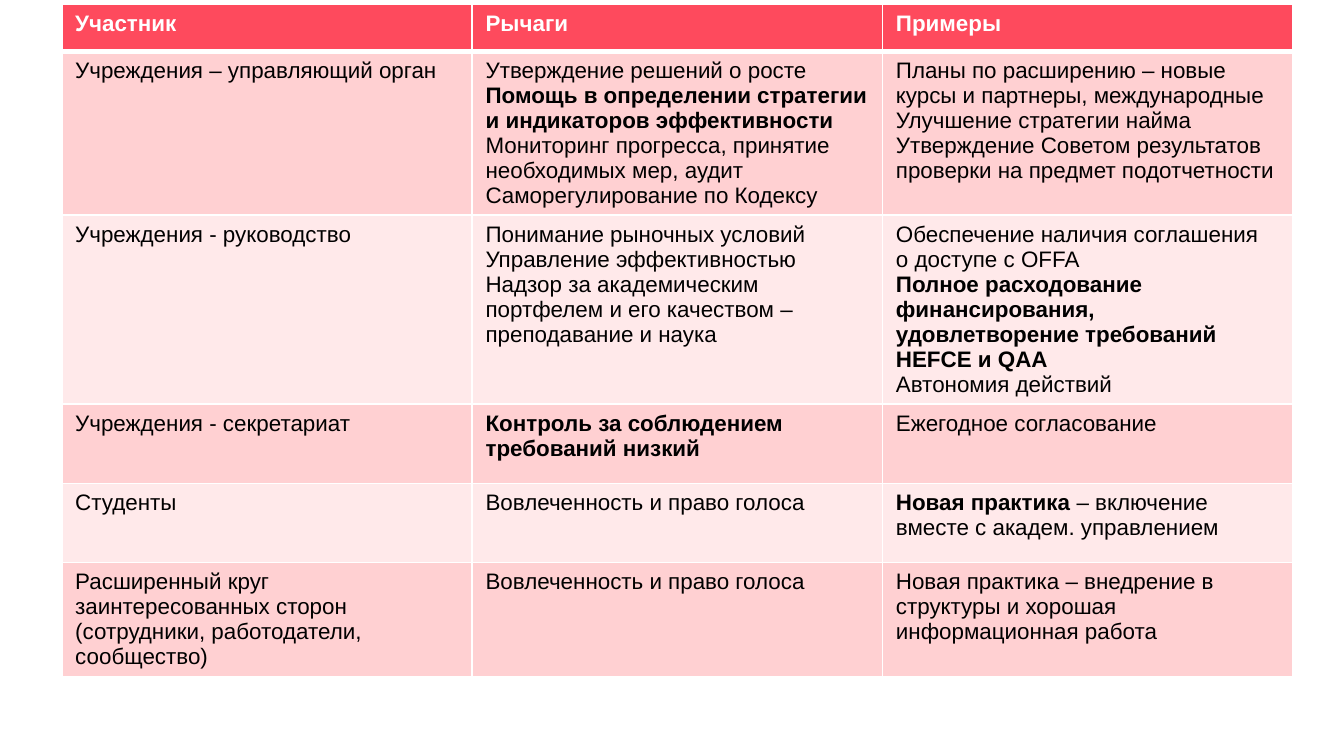
from lxml.etree import SubElement
from pptx import Presentation
from pptx.dml.color import RGBColor
from pptx.oxml.ns import qn
from pptx.util import Inches, Pt

WHITE = RGBColor(0xFF, 0xFF, 0xFF)
BLACK = RGBColor(0x00, 0x00, 0x00)
RED = RGBColor(0xFE, 0x4A, 0x5D)
ROSE = RGBColor(0xFF, 0xD0, 0xD2)
PALE = RGBColor(0xFF, 0xE9, 0xEA)

VOICE = ["Вовлеченность и право голоса"]
BOLD_END = "*"

ROWS = [
    (0.35, ["Участник*"], ["Рычаги*"], ["Примеры*"]),
    (1.16, ["Учреждения – управляющий орган"],
     ["Утверждение решений о росте",
      "Помощь в определении стратегии и индикаторов эффективности*",
      "Мониторинг прогресса, принятие необходимых мер, аудит",
      "Саморегулирование по Кодексу"],
     ["Планы по расширению – новые курсы и партнеры, международные",
      "Улучшение стратегии найма",
      "Утверждение Советом результатов проверки на предмет подотчетности"]),
    (1.31, ["Учреждения - руководство"],
     ["Понимание рыночных условий",
      "Управление эффективностью",
      "Надзор за академическим портфелем и его качеством – преподавание и наука"],
     ["Обеспечение наличия соглашения  о доступе с OFFA",
      "Полное расходование финансирования, удовлетворение требований HEFCE и QAA*",
      "Автономия действий"]),
    (0.59, ["Учреждения - секретариат"],
     ["Контроль за соблюдением требований низкий*"],
     ["Ежегодное согласование"]),
    (0.59, ["Студенты"], VOICE,
     ["Новая практика *– включение вместе с академ. управлением"]),
    (0.83,
     ["Расширенный круг заинтересованных сторон (сотрудники, работодатели, сообщество)"],
     VOICE,
     ["Новая практика – внедрение в структуры и хорошая информационная работа"]),
]


def write(cell, lines, color):
    frame = cell.text_frame
    frame.text = "\n".join(lines)
    for para, line in zip(frame.paragraphs, lines):
        bold, _, plain = line.rpartition(BOLD_END)
        para.text = bold or plain
        if bold and plain:
            para.add_run().text = plain
        for i, run in enumerate(para.runs):
            font = run.font
            font.name = "Arial"
            font.size = Pt(12)
            font.bold = bool(bold) and i == 0
            font.color.rgb = color


def border(cell, top, bottom):
    props = cell._tc.get_or_add_tcPr()
    sides = {"L": 1, "R": 1, "T": top, "B": bottom}
    for i, (side, width) in enumerate(sides.items()):
        line = SubElement(props, qn(f"a:ln{side}"), w=str(Pt(width)))
        fill = SubElement(line, qn("a:solidFill"))
        SubElement(fill, qn("a:srgbClr"), val=str(WHITE))
        props.insert(i, line)


deck = Presentation()
deck.slide_width = Inches(10)
deck.slide_height = deck.slide_width * 9 // 16
slide = deck.slides.add_slide(deck.slide_layouts[6])

high = sum(row[0] for row in ROWS)
table = slide.shapes.add_table(
    len(ROWS), 3, Inches(0.46), Inches(0.03), Inches(9.16), Inches(high)).table

for r, (height, *texts) in enumerate(ROWS):
    table.rows[r].height = Inches(height)
    for c, lines in enumerate(texts):
        cell = table.cell(r, c)
        write(cell, lines, BLACK if r else WHITE)
        cell.fill.solid()
        cell.fill.fore_color.rgb = (ROSE if r % 2 else PALE) if r else RED
        border(cell, 3 if r == 1 else 1, 1 if r else 3)

deck.save("out.pptx")
